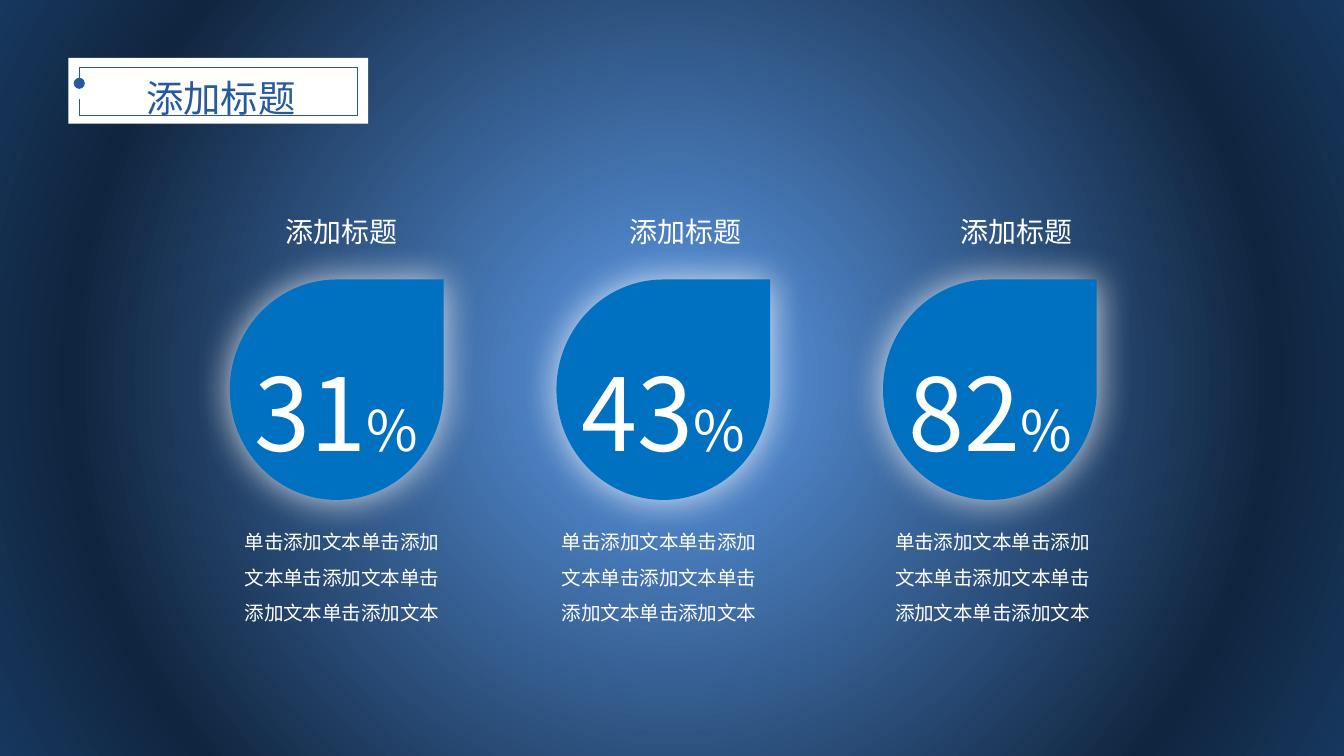
"""Build a slide with three percentage drops on a radial blue background."""
from pptx import Presentation
from pptx.dml.color import RGBColor as RGB
from pptx.enum.shapes import MSO_CONNECTOR as LINE, MSO_SHAPE as SHAPE
from pptx.enum.text import MSO_ANCHOR as ANCHOR, PP_ALIGN as ALIGN
from pptx.oxml import parse_xml
from pptx.oxml.ns import nsdecls
from pptx.util import Inches, Pt

FONT = "Noto Sans CJK SC"
HUES = {"white": "FFFFFF", "ink": "265A9A", "drop": "0070C0",
        "core": "558ED5", "dark": "10253F", "edge": "17375E"}
TITLE = "添加标题"
BODY = ["单击添加文本单击添加", "文本单击添加文本单击", "添加文本单击添加文本"]


def style(para, size, hue="white", gap=None):
    para.alignment = ALIGN.CENTER
    para.line_spacing = gap
    para.font.size = Pt(size)
    para.font.name = FONT
    para.font.color.rgb = RGB.from_string(HUES[hue])


def write(box, lines, size, hue="white", gap=None, wrap=False):
    area = shapes.add_textbox(*map(Inches, box)).text_frame
    area.word_wrap = wrap
    area.text = "\n".join(lines)
    for para in area.paragraphs:
        style(para, size, hue, gap)


deck = Presentation()
deck.slide_width = Inches(10)
deck.slide_height = deck.slide_width * 9 // 16
slide = deck.slides.add_slide(deck.slide_layouts[6])
shapes = slide.shapes

stops = "".join(
    f'<a:gs pos="{pos * 1000}"><a:srgbClr val="{HUES[hue]}"/></a:gs>'
    for pos, hue in [(9, "core"), (78, "dark"), (100, "edge")])
slide.element.cSld.insert(0, parse_xml(
    f'<p:bg {nsdecls("p", "a")}><p:bgPr><a:gradFill><a:gsLst>{stops}</a:gsLst>'
    '<a:path path="circle"><a:fillToRect l="50000" t="50000" r="50000" b="50000"/>'
    '</a:path></a:gradFill><a:effectLst/></p:bgPr></p:bg>'))

plate = shapes.add_shape(SHAPE.RECTANGLE, *map(Inches, (0.51, 0.43, 2.23, 0.49)))
plate.shadow.inherit = False
plate.fill.solid()
plate.fill.fore_color.rgb = RGB.from_string(HUES["white"])
plate.line.fill.background()

frame = [(0.59, 0.74), (0.59, 0.86), (2.66, 0.86), (2.66, 0.5), (0.59, 0.5), (0.59, 0.62)]
for start, end in zip(frame, frame[1:]):
    rule = shapes.add_connector(LINE.STRAIGHT, *map(Inches, start + end))
    rule.line.color.rgb = RGB.from_string(HUES["ink"])
    rule.line.width = Pt(0.25)
    props = rule.element.spPr
    if end == frame[-1]:
        props.ln.append(parse_xml(f'<a:tailEnd {nsdecls("a")} type="oval"/>'))
    props.append(parse_xml(f'<a:effectLst {nsdecls("a")}/>'))
write((0.63, 0.34, 2.03, 0.55), [TITLE], 20, "ink", 1.5, True)

cards = [("31", 2.02, 1.71), ("43", 4.58, 4.07), ("82", 7.04, 6.55)]
for num, (value, head, note) in enumerate(cards):
    left = 1.71 + 2.43 * num
    drop = shapes.add_shape(SHAPE.TEAR, *map(Inches, (left, 2.08, 1.59, 1.64)))
    drop.fill.solid()
    drop.fill.fore_color.rgb = RGB.from_string(HUES["drop"])
    drop.line.fill.background()
    drop.element.spPr.append(parse_xml(
        f'<a:effectLst {nsdecls("a")}><a:outerShdw blurRad="{Pt(20)}" dist="0" dir="0">'
        f'<a:srgbClr val="{HUES["white"]}"><a:alpha val="80000"/></a:srgbClr>'
        '</a:outerShdw></a:effectLst>'))
    area = drop.text_frame
    area.word_wrap = False
    area.vertical_anchor = ANCHOR.TOP
    area.margin_left = area.margin_right = 0
    area.margin_top, area.margin_bottom = Inches(0.29), Inches(-0.2)
    para = area.paragraphs[0]
    style(para, 54)
    para.add_run().text = value
    sign = para.add_run()
    sign.text = "%"
    sign.font.size = Pt(30)

    write((head, 1.55, 1.04, 0.35), [TITLE], 15)
    write((note, 3.81, 1.67, 0.87), BODY, 10.5, gap=1.5)

deck.save("out.pptx")
